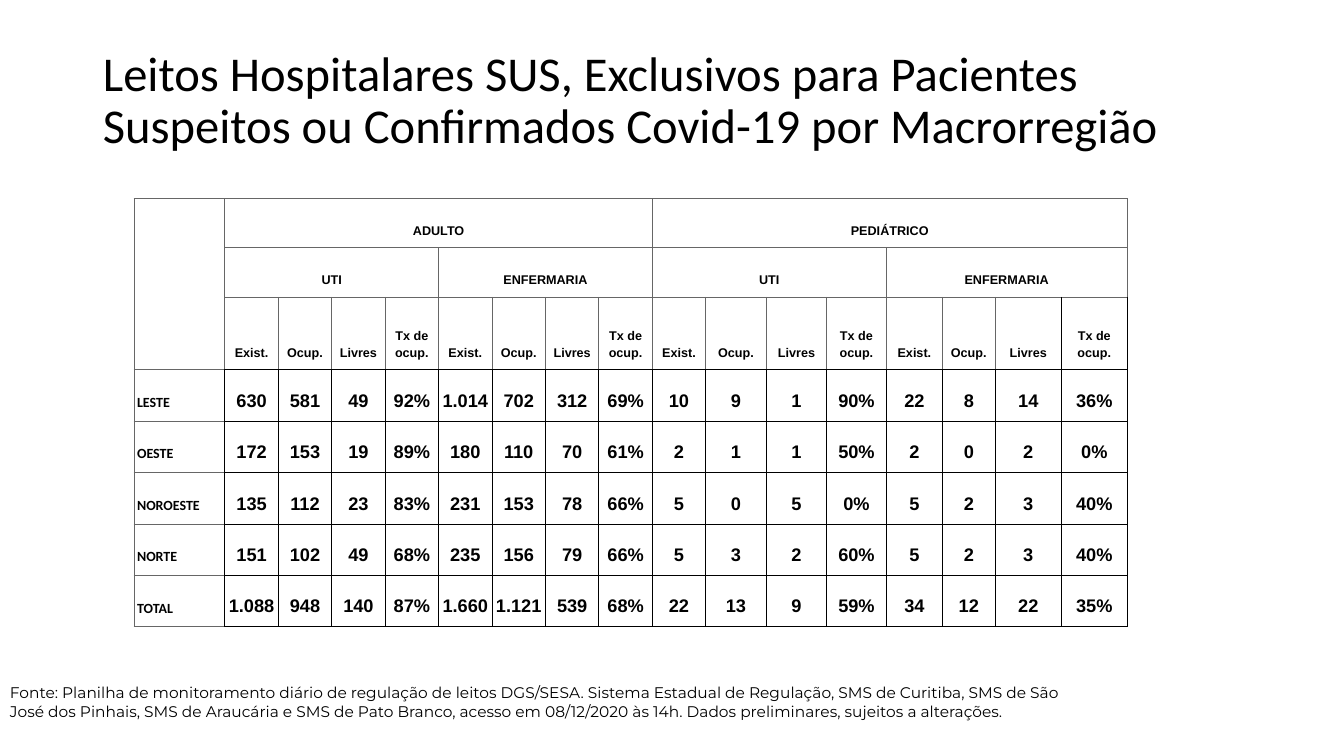
from lxml.etree import SubElement as Sub
from pptx import Presentation
from pptx.dml.color import RGBColor as Rgb
from pptx.enum.text import MSO_ANCHOR as Anchor, MSO_AUTO_SIZE as Fit, PP_ALIGN as Align
from pptx.oxml.ns import qn
from pptx.util import Inches, Pt

COLORS = {"ink": "000000", "grey": "666666"}
TITLE = ("Leitos Hospitalares SUS, Exclusivos para Pacientes "
         "Suspeitos ou Confirmados Covid-19 por Macrorregião")
SOURCE = ("Fonte: Planilha de monitoramento diário de regulação de leitos DGS/SESA. "
          "Sistema Estadual de Regulação, SMS de Curitiba, SMS de São José dos Pinhais, "
          "SMS de Araucária e SMS de Pato Branco, acesso em 08/12/2020 às 14h. "
          "Dados preliminares, sujeitos a alterações.")
GROUPS = ["ADULTO", "PEDIÁTRICO"]
WARDS = ["UTI", "ENFERMARIA"]
HEADS = ["Exist.", "Ocup.", "Livres", "Tx de ocup."]
BEDS = {
    "LESTE": "630 581 49 92% 1.014 702 312 69% 10 9 1 90% 22 8 14 36%",
    "OESTE": "172 153 19 89% 180 110 70 61% 2 1 1 50% 2 0 2 0%",
    "NOROESTE": "135 112 23 83% 231 153 78 66% 5 0 5 0% 5 2 3 40%",
    "NORTE": "151 102 49 68% 235 156 79 66% 5 3 2 60% 5 2 3 40%",
    "TOTAL": "1.088 948 140 87% 1.660 1.121 539 68% 22 13 9 59% 34 12 22 35%",
}
WIDTHS = [0.9] + [0.53] * 9 + [0.6, 0.6, 0.59, 0.56, 0.52, 0.66, 0.65]
HEIGHTS = [0.49, 0.49, 0.72] + [0.51] * 5
TOP = 3  # header rows
LAST = len(WIDTHS) - 1


def write(frame, text, size, font="Arial", bold=False, align=Align.LEFT, space=1.0):
    frame.word_wrap = True
    para = frame.paragraphs[0]
    para.alignment = align
    para.line_spacing = space
    run = para.add_run()
    run.text = text
    run.font.size = Pt(size)
    run.font.name = font
    run.font.bold = bold
    run.font.color.rgb = Rgb.from_string(COLORS["ink"])


def add_title(slide):
    title = slide.shapes.title
    title.left, title.top = Inches(0.92), Inches(0.55)
    title.width, title.height = Inches(11.5), Inches(1.45)
    frame = title.text_frame
    frame.auto_size = Fit.NONE
    frame.vertical_anchor = Anchor.MIDDLE
    frame.margin_bottom = Inches(0.58)
    write(frame, TITLE, 34.7, font="Calibri", space=0.9)


def add_source(slide):
    box = slide.shapes.add_textbox(Inches(0), Inches(6.73), Inches(10.69), Inches(0.7))
    write(box.text_frame, SOURCE, 11, font="Montserrat")


def edges(row, col):
    """Border colours of a cell: left, right, top, bottom."""
    if col == 0:
        return "grey", "grey" if row < TOP else "ink", "grey", "grey"
    if row >= TOP:
        return ("ink",) * 4
    if row < TOP - 1:
        return ("grey",) * 4
    return ("ink" if col == LAST else "grey",
            "ink" if col >= LAST - 1 else "grey", "grey", "ink")


def style(cell, row, col):
    cell.margin_left = cell.margin_right = Inches(0.03)
    cell.margin_top = cell.margin_bottom = Inches(0.1)
    cell.vertical_anchor = Anchor.BOTTOM
    props = cell._tc.get_or_add_tcPr()
    for side, color in zip("LRTB", edges(row, col)):
        line = Sub(props, qn(f"a:ln{side}"), w=str(Pt(0.75)))
        fill = Sub(line, qn("a:solidFill"))
        Sub(fill, qn("a:srgbClr"), val=COLORS[color])
    cell.fill.background()


def put(cell, text, size, **form):
    write(cell.text_frame, text, size, bold=True, space=1.15, **form)


def add_heads(table):
    """Header rows: groups, wards and counts."""
    table.cell(0, 0).merge(table.cell(TOP - 1, 0))
    levels = [(GROUPS, 8), (WARDS * 2, 4), (HEADS * 4, 1)]
    for row, (names, span) in enumerate(levels):
        for num, name in enumerate(names):
            col = 1 + num * span
            cell = table.cell(row, col)
            if span > 1:
                cell.merge(table.cell(row, col + span - 1))
            put(cell, name, 9, align=Align.CENTER)


def add_beds(slide):
    frame = slide.shapes.add_table(len(HEIGHTS), len(WIDTHS), Inches(1.33), Inches(1.97),
                                   Inches(sum(WIDTHS)), Inches(sum(HEIGHTS)))
    table = frame.table
    table.first_row = table.horz_banding = False
    for col, width in zip(table.columns, WIDTHS):
        col.width = Inches(width)
    for row, height in zip(table.rows, HEIGHTS):
        row.height = Inches(height)
    for row in range(len(HEIGHTS)):
        for col in range(len(WIDTHS)):
            style(table.cell(row, col), row, col)
    add_heads(table)
    # One row per region
    for row, (region, counts) in enumerate(BEDS.items(), TOP):
        put(table.cell(row, 0), region, 10, font="Calibri")
        for col, count in enumerate(counts.split(), 1):
            put(table.cell(row, col), count, 13, align=Align.CENTER)


def main():
    deck = Presentation()
    deck.slide_width, deck.slide_height = Inches(13.33), Inches(7.5)
    slide = deck.slides.add_slide(deck.slide_layouts[5])
    add_title(slide)
    add_source(slide)
    add_beds(slide)
    deck.save("out.pptx")


if __name__ == "__main__":
    main()
